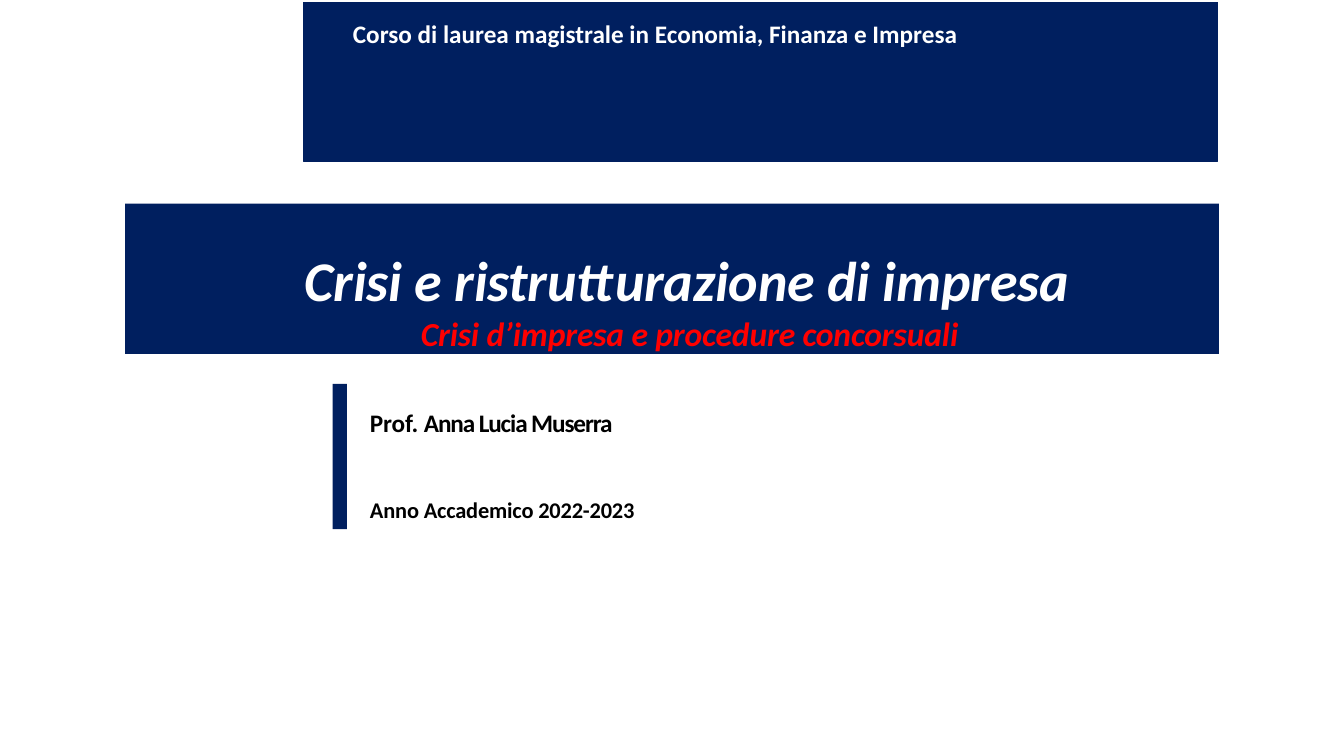
import pptx
import pptx.dml.color
import pptx.enum.shapes
import pptx.enum.text
import pptx.util
from pptx.util import Inches

NAVY = "001F5F"
WHITE = "FFFFFF"
BLACK = "000000"
RED = "FF0000"


def color(hex_value):
    return pptx.dml.color.RGBColor.from_string(hex_value)


def place(shape, left, top, width, height):
    shape.left, shape.top = Inches(left), Inches(top)
    shape.width, shape.height = Inches(width), Inches(height)


def prepare_frame(shape, left=0, top=0):
    """Wrap text from the top, with only the given insets."""
    frame = shape.text_frame
    frame.word_wrap = True
    frame.auto_size = pptx.enum.text.MSO_AUTO_SIZE.NONE
    frame.vertical_anchor = pptx.enum.text.MSO_ANCHOR.TOP
    frame.margin_left, frame.margin_top = Inches(left), Inches(top)
    frame.margin_right = frame.margin_bottom = 0
    return frame


def add_run(paragraph, text, size, hex_value, italic=False, spacing=0):
    """Add a bold run; spacing is the letter spacing in points."""
    run = paragraph.add_run()
    run.text = text
    font = run.font
    font.name, font.size = "Calibri", pptx.util.Pt(size)
    font.bold, font.italic = True, italic
    font.color.rgb = color(hex_value)
    if spacing:
        run._r.get_or_add_rPr().set("spc", str(round(spacing * 100)))


def add_block(slide, left, top, width, height, outlined=False):
    block = slide.shapes.add_shape(
        pptx.enum.shapes.MSO_SHAPE.RECTANGLE,
        Inches(left), Inches(top), Inches(width), Inches(height))
    block.shadow.inherit = False
    block.fill.solid()
    block.fill.fore_color.rgb = color(NAVY)
    if outlined:
        block.line.color.rgb = color(NAVY)
        block.line.width = pptx.util.Pt(0.75)
    else:
        block.line.fill.background()
    return block


def add_course_banner(slide):
    banner = add_block(slide, 1.24, 2.02, 10.85, 1.49)
    frame = prepare_frame(banner, left=0.42, top=0.42)
    lines = [("Crisi e ristrutturazione di impresa ", 40, WHITE),
             ("Crisi d’impresa e procedure concorsuali ", 24, RED)]
    for index, (text, size, hex_value) in enumerate(lines):
        paragraph = frame.add_paragraph() if index else frame.paragraphs[0]
        paragraph.alignment = pptx.enum.text.PP_ALIGN.CENTER
        add_run(paragraph, text, size, hex_value, italic=True, spacing=-0.1)


def add_teacher(slide):
    box = slide.shapes.add_textbox(
        Inches(3.66), Inches(4.02), Inches(3.59), Inches(1.17))
    frame = prepare_frame(box, left=0.01, top=0.02)
    teacher = frame.paragraphs[0]
    add_run(teacher, "Prof. ", 18, BLACK, spacing=-0.1)
    add_run(teacher, "Anna Lucia Muserra", 18, BLACK, spacing=-0.8)
    year = frame.add_paragraph()
    year.space_before = pptx.util.Pt(42)
    add_run(year, "Anno Accademico 2022-2023", 16, BLACK, spacing=-0.1)


def set_title(slide, text):
    title = slide.shapes.title
    place(title, 3.5, 0.18, 7.41, 0.3)
    paragraph = prepare_frame(title).paragraphs[0]
    paragraph.alignment = pptx.enum.text.PP_ALIGN.LEFT
    add_run(paragraph, text, 18, WHITE)
    # The title lies on the header block, so it goes to the front.
    title.element.getparent().append(title.element)


def main():
    presentation = pptx.Presentation()
    presentation.slide_width = Inches(13.33)
    presentation.slide_height = Inches(7.5)
    slide = presentation.slides.add_slide(presentation.slide_layouts[5])

    add_teacher(slide)
    add_block(slide, 3.3, 3.81, 0.14, 1.44)
    add_block(slide, 3.01, 0.02, 9.07, 1.58, outlined=True)
    add_course_banner(slide)
    set_title(slide, "Corso di laurea magistrale in Economia, Finanza e Impresa")

    presentation.save("out.pptx")


if __name__ == "__main__":
    main()
